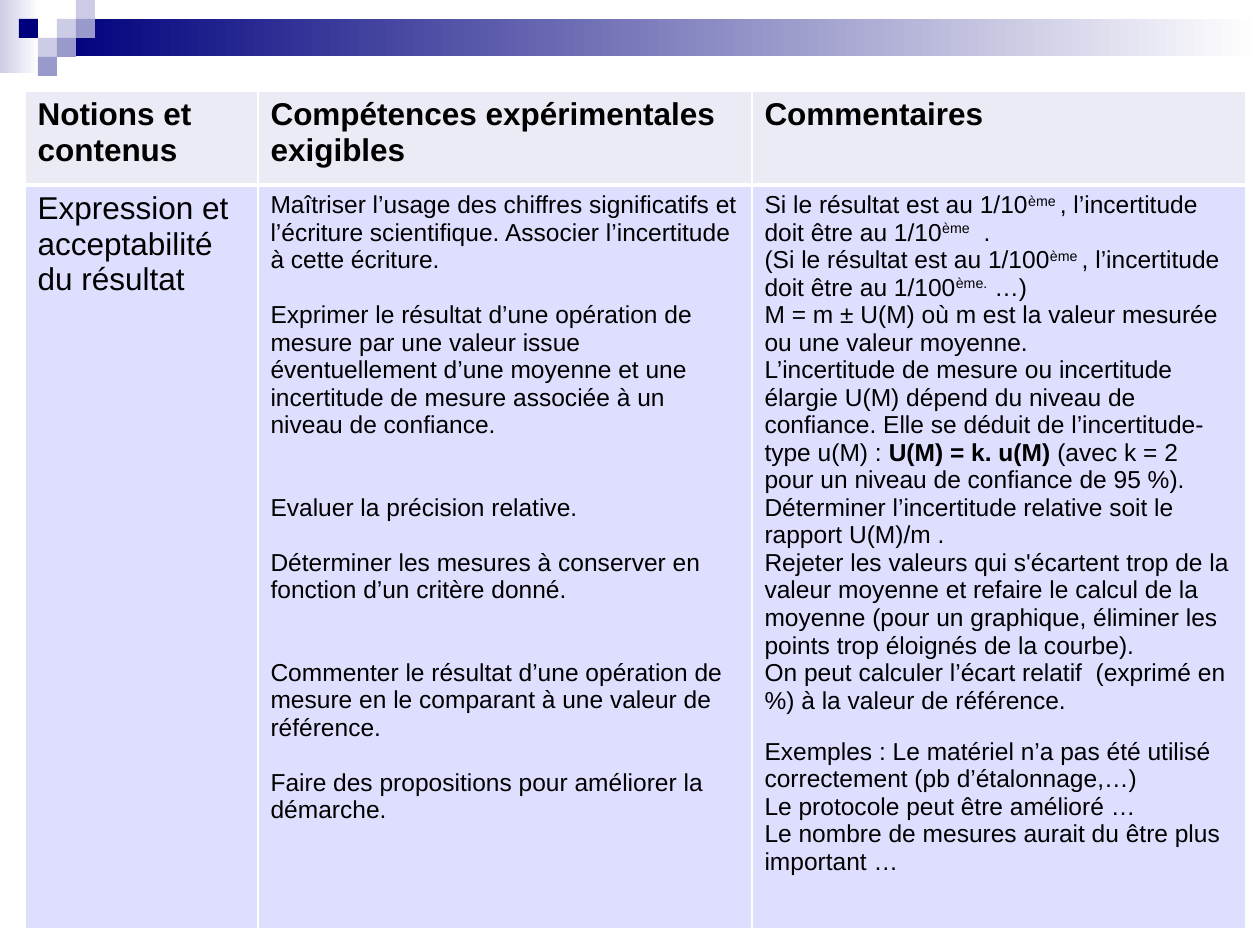
from lxml import etree
from pptx import Presentation
from pptx.dml.color import RGBColor
from pptx.enum.shapes import MSO_SHAPE
from pptx.oxml.ns import qn
from pptx.util import Emu, Pt

RECTANGLE = MSO_SHAPE.RECTANGLE
PX = 914400 / 126
NAVY, LILAC, PALE, WHITE = "00007D", "9999CC", "CCCCE6", "FFFFFF"
HEADER_FILL, BODY_FILL, BLACK = "EBEBF5", "DEDEFF", "000000"
FONT = "Arial"

# Banner: gradients as (box in px, start colour), tiles as (column, row, colour)
GRADIENTS = [((0, 0, 39, 73), PALE), ((57, 19, 1203, 37), NAVY)]
TILE = 19
TILES = [
    (3, 1, PALE), (4, 0, PALE), (4, 1, LILAC), (2, 2, PALE),
    (1, 1, NAVY), (3, 2, LILAC), (2, 3, LILAC),
]

# Table: a paragraph is (points of space before, runs); a run is (text, style)
TABLE_LEFT, TABLE_TOP = 25, 91
COLUMN_WIDTHS = [233, 494, 494]
ROW_HEIGHTS = [94, 744]
LINE, SMALL_LINE = 15.7, 13.4
PLAIN, BOLD, SUPER = "plain", "bold", "super"

HEADERS = ["Notions et contenus", "Compétences expérimentales exigibles", "Commentaires"]
NOTION = [(0, [("Expression et acceptabilité du résultat", PLAIN)])]
SKILLS = [
    (0, [("Maîtriser l’usage des chiffres significatifs et l’écriture scientifique. "
          "Associer l’incertitude à cette écriture.", PLAIN)]),
    (LINE, [("Exprimer le résultat d’une opération de mesure par une valeur issue "
             "éventuellement d’une moyenne et une incertitude de mesure associée à un "
             "niveau de confiance.", PLAIN)]),
    (2 * LINE, [("Evaluer la précision relative.", PLAIN)]),
    (LINE, [("Déterminer les mesures à conserver en fonction d’un critère donné.", PLAIN)]),
    (2 * LINE, [("Commenter le résultat d’une opération de mesure en le comparant à une "
                 "valeur de référence.", PLAIN)]),
    (LINE, [("Faire des propositions pour améliorer la démarche.", PLAIN)]),
]
COMMENTS = [
    (0, [("Si le résultat est au 1/10", PLAIN), ("ème ", SUPER),
         (", l’incertitude doit être au 1/10", PLAIN), ("ème", SUPER), ("  .", PLAIN)]),
    (0, [("(Si le résultat est au 1/100", PLAIN), ("ème ", SUPER),
         (", l’incertitude doit être au 1/100", PLAIN), ("ème.", SUPER), (" …)", PLAIN)]),
    (0, [("M = m ± U(M) où m est la valeur mesurée ou une valeur moyenne.", PLAIN)]),
    (0, [("L’incertitude de mesure ou incertitude élargie U(M) dépend du niveau de "
          "confiance. Elle se déduit de l’incertitude-type u(M) : ", PLAIN),
         ("U(M) = k. u(M) ", BOLD),
         ("(avec k = 2 pour un niveau de confiance de 95 %).", PLAIN)]),
    (0, [("Déterminer l’incertitude relative soit le rapport U(M)/m .", PLAIN)]),
    (0, [("Rejeter les valeurs qui s'écartent trop de la valeur moyenne et refaire le "
          "calcul de la moyenne (pour un graphique, éliminer les points trop éloignés "
          "de la courbe).", PLAIN)]),
    (0, [("On peut calculer l’écart relatif  (exprimé en %) à la valeur de référence.", PLAIN)]),
    (SMALL_LINE, [("Exemples : Le matériel n’a pas été utilisé correctement "
                   "(pb d’étalonnage,…)", PLAIN)]),
    (0, [("Le protocole peut être amélioré …", PLAIN)]),
    (0, [("Le nombre de mesures aurait du être plus important …", PLAIN)]),
]
BODY = [(NOTION, 18), (SKILLS, 14), (COMMENTS, 14)]


def px(length):
    return Emu(round(length * PX))


def color(hex_code):
    return RGBColor.from_string(hex_code)


def add_rectangle(slide, box):
    shape = slide.shapes.add_shape(RECTANGLE, *map(px, box))
    shape.shadow.inherit = False
    shape.line.fill.background()
    return shape


def add_banner(slide):
    for box, start in GRADIENTS:
        fill = add_rectangle(slide, box).fill
        fill.gradient()
        fill.gradient_angle = 0
        for stop, shade in zip(fill.gradient_stops, (start, WHITE)):
            stop.color.rgb = color(shade)
    for column, row, shade in TILES:
        fill = add_rectangle(slide, (column * TILE, row * TILE, TILE, TILE)).fill
        fill.solid()
        fill.fore_color.rgb = color(shade)


def set_borders(cell, widths):
    """Draw white borders; widths maps each side (L, R, T, B) to points."""
    properties = cell._tc.get_or_add_tcPr()
    for side, width in widths.items():
        line = etree.SubElement(properties, qn(f"a:ln{side}"), w=str(Pt(width)))
        solid = etree.SubElement(line, qn("a:solidFill"))
        etree.SubElement(solid, qn("a:srgbClr"), val=WHITE)


def fill_cell(cell, paragraphs, size, shade, widths):
    set_borders(cell, widths)
    cell.fill.solid()
    cell.fill.fore_color.rgb = color(shade)
    frame = cell.text_frame
    for index, (gap, runs) in enumerate(paragraphs):
        para = frame.add_paragraph() if index else frame.paragraphs[0]
        para.space_before = Pt(gap)
        for text, style in runs:
            span = para.add_run()
            span.text = text
            font = span.font
            font.name, font.size, font.bold = FONT, Pt(size), style == BOLD
            font.color.rgb = color(BLACK)
            if style == SUPER:
                font._element.set("baseline", "30000")


def add_content_table(slide):
    frame = slide.shapes.add_table(
        len(ROW_HEIGHTS), len(COLUMN_WIDTHS), px(TABLE_LEFT), px(TABLE_TOP),
        px(sum(COLUMN_WIDTHS)), px(sum(ROW_HEIGHTS)))
    table = frame.table
    for column, width in zip(table.columns, COLUMN_WIDTHS):
        column.width = px(width)
    for row, height in zip(table.rows, ROW_HEIGHTS):
        row.height = px(height)
    for index, (header, (paragraphs, size)) in enumerate(zip(HEADERS, BODY)):
        fill_cell(table.cell(0, index), [(0, [(header, BOLD)])], 18, HEADER_FILL,
                  {"L": 1, "R": 1, "T": 1, "B": 3})
        fill_cell(table.cell(1, index), paragraphs, size, BODY_FILL,
                  {"L": 1, "R": 1, "T": 3, "B": 1})


def main():
    deck = Presentation()
    deck.slide_width, deck.slide_height = px(1260), px(945)
    slide = deck.slides.add_slide(deck.slide_layouts[6])
    add_banner(slide)
    add_content_table(slide)
    deck.save("out.pptx")


if __name__ == "__main__":
    main()
